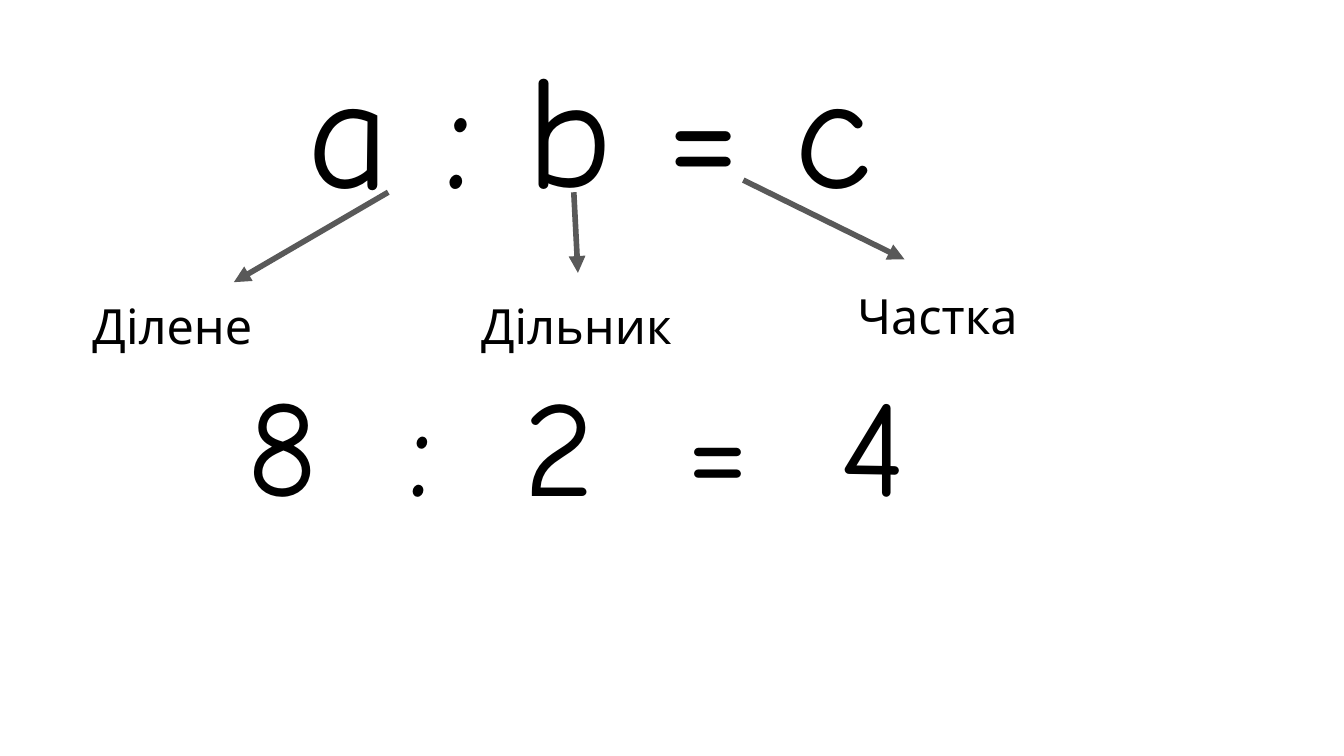
import pptx
import pptx.dml.color
import pptx.enum.shapes
import pptx.enum.text
import pptx.oxml
import pptx.oxml.ns
import pptx.util

Pt = pptx.util.Pt
BLACK = pptx.dml.color.RGBColor(0x00, 0x00, 0x00)
GREY = pptx.dml.color.RGBColor(0x59, 0x59, 0x59)
DRAW = pptx.oxml.ns.nsdecls("a")


class Board:
    font = "Comic Neue"
    pad = Pt(7.2)
    stroke = Pt(3)

    def __init__(self, slide):
        self.slide = slide

    def text(self, words, size, left, top, width, height):
        box = self.slide.shapes.add_textbox(Pt(left), Pt(top), Pt(width), Pt(height))
        frame = box.text_frame
        style = {
            "word_wrap": True,
            "auto_size": pptx.enum.text.MSO_AUTO_SIZE.SHAPE_TO_FIT_TEXT,
            "margin_left": self.pad,
            "margin_top": self.pad,
            "margin_right": self.pad,
            "margin_bottom": self.pad,
        }
        for name, value in style.items():
            setattr(frame, name, value)
        run = frame.paragraphs[0].add_run()
        run.text = words
        for name, value in {"name": self.font, "size": Pt(size)}.items():
            setattr(run.font, name, value)
        run.font.color.rgb = BLACK
        return box

    def arrow(self, *ends):
        """Draw an arrow from (x1, y1) to (x2, y2), with its head at the second point."""
        line = self.slide.shapes.add_connector(
            pptx.enum.shapes.MSO_CONNECTOR.STRAIGHT, *map(Pt, ends)
        )
        line.line.color.rgb = GREY
        line.line.width = self.stroke
        line.line._get_or_add_ln().append(
            pptx.oxml.parse_xml(f'<a:tailEnd {DRAW} type="triangle"/>')
        )
        line._element.spPr.append(pptx.oxml.parse_xml(f"<a:effectLst {DRAW}/>"))
        return line


def main():
    deck = pptx.Presentation()
    deck.slide_width, deck.slide_height = Pt(720), Pt(405)
    board = Board(deck.slides.add_slide(deck.slide_layouts[6]))

    board.text("a : b = c", 86, 157.7, 7.9, 404.6, 118.8)
    first = board.arrow(208, 103, 125.3, 151.2)
    board.arrow(307.4, 103, 309.6, 146.2)
    board.arrow(398.2, 96.5, 484.6, 139)

    label = board.text("Ділене", 26, 42.5, 151.2, 165.6, 46.1)
    first.end_connect(label, 0)
    board.text("Дільник", 26, 250.6, 151.2, 147.6, 46.1)
    board.text("Частка", 26, 452.2, 146.2, 216, 46.1)
    board.text("8  :  2  =  4", 73, 125.3, 185.8, 452.2, 103)

    deck.save("out.pptx")


if __name__ == "__main__":
    main()
